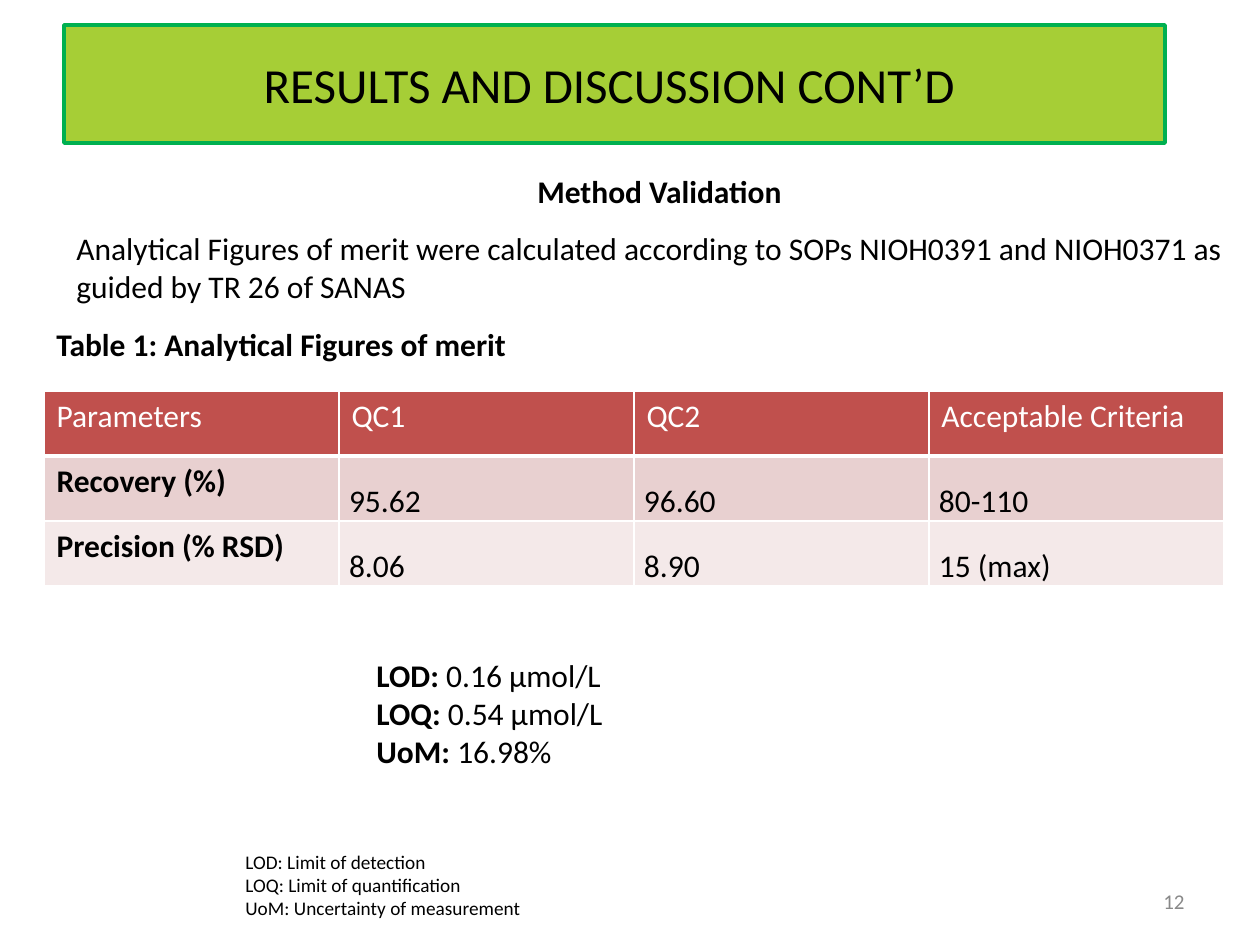
from dataclasses import dataclass

from lxml import etree
from pptx import Presentation
from pptx.dml.color import RGBColor
from pptx.enum.text import MSO_ANCHOR, PP_ALIGN
from pptx.oxml.ns import qn
from pptx.util import Inches, Pt

PX = Inches(1) / 126
FONT = "Calibri"
LEFT, CENTER, RIGHT = PP_ALIGN.LEFT, PP_ALIGN.CENTER, PP_ALIGN.RIGHT
TOP, MIDDLE, BOTTOM = MSO_ANCHOR.TOP, MSO_ANCHOR.MIDDLE, MSO_ANCHOR.BOTTOM

BLACK = RGBColor(0x00, 0x00, 0x00)
WHITE = RGBColor(0xFF, 0xFF, 0xFF)
GRAY = RGBColor(0x89, 0x89, 0x89)
LIME = RGBColor(0xA6, 0xCE, 0x36)
GREEN = RGBColor(0x00, 0xB0, 0x50)
RED = RGBColor(0xC0, 0x50, 0x4D)
ROSE = RGBColor(0xE8, 0xD0, 0xD0)
PALE_ROSE = RGBColor(0xF4, 0xE9, 0xE9)


@dataclass(frozen=True)
class Run:
    text: str
    bold: bool = False


@dataclass(frozen=True)
class Style:
    size: int = 18
    color: RGBColor = BLACK
    align: PP_ALIGN = LEFT
    before: int = 0
    after: int = 0
    line: float = 1.0


@dataclass(frozen=True)
class TextBlock:
    left: int
    top: int
    width: int
    height: int
    lines: tuple[tuple[Run, ...], ...]
    style: Style = Style()
    anchor: MSO_ANCHOR = TOP


TEXT_BLOCKS = (
    TextBlock(903, 876, 294, 50, ((Run("12"),),), Style(12, GRAY, RIGHT), MIDDLE),
    TextBlock(240, 166, 839, 51, ((Run("Method Validation", True),),),
              Style(align=CENTER, before=10, after=10)),
    TextBlock(44, 319, 630, 51,
              ((Run("Table 1: Analytical Figures of merit", True),),), Style(after=10)),
    TextBlock(64, 223, 1196, 89,
              ((Run("Analytical Figures of merit were calculated according to SOPs "
                    "NIOH0391 and NIOH0371 as guided by TR 26 of SANAS"),),)),
    TextBlock(364, 650, 635, 127, (
        (Run("LOD: ", True), Run("0.16 µmol/L")),
        (Run("LOQ:", True), Run(" 0.54 µmol/L")),
        (Run("UoM: ", True), Run("16.98%")),
    )),
    TextBlock(233, 844, 814, 106, (
        (Run("LOD: Limit of detection"),),
        (Run("LOQ: Limit of quantification"),),
        (Run("UoM: Uncertainty of measurement"),),
    ), Style(11)),
)

MERIT_ROWS = (
    ("Parameters", "QC1", "QC2", "Acceptable Criteria"),
    ("Recovery (%)", "95.62", "96.60", "80-110"),
    ("Precision (% RSD)", "8.06", "8.90", "15 (max)"),
)
ROW_FILLS = (RED, ROSE, PALE_ROSE)
COLUMN_WIDTH, ROW_HEIGHT = 295, 65
VALUE_FORMAT = {
    "vertical_anchor": BOTTOM,
    "margin_left": Inches(0.08),
    "margin_right": Inches(0.08),
    "margin_top": Inches(0.01),
    "margin_bottom": 0,
}


def px(length: int) -> int:
    return round(length * PX)


def set_attributes(target, values: dict) -> None:
    for name, value in values.items():
        setattr(target, name, value)


def write_lines(frame, lines: tuple[tuple[Run, ...], ...], style: Style) -> None:
    for index, runs in enumerate(lines):
        paragraph = frame.add_paragraph() if index else frame.paragraphs[0]
        set_attributes(paragraph, {
            "alignment": style.align,
            "space_before": Pt(style.before),
            "space_after": Pt(style.after),
            "line_spacing": style.line,
        })
        for part in runs:
            run = paragraph.add_run()
            run.text = part.text
            set_attributes(run.font, {"name": FONT, "size": Pt(style.size), "bold": part.bold})
            run.font.color.rgb = style.color


def draw_title(slide) -> None:
    title = slide.shapes.title
    set_attributes(title, {"left": px(64), "top": px(25), "width": px(1101), "height": px(118)})
    outline = etree.Element(qn("a:prstGeom"), prst="roundRect")
    guides = etree.SubElement(outline, qn("a:avLst"))
    etree.SubElement(guides, qn("a:gd"), name="adj", fmla="val 1500")
    title._element.spPr.find(qn("a:xfrm")).addnext(outline)
    title.fill.solid()
    title.fill.fore_color.rgb = LIME
    title.line.color.rgb = GREEN
    title.line.width = Pt(2)
    title.text_frame.vertical_anchor = MIDDLE
    write_lines(title.text_frame, ((Run("RESULTS AND DISCUSSION CONT’D "),),),
                Style(28, align=CENTER))


def draw_text(slide, block: TextBlock) -> None:
    box = slide.shapes.add_textbox(px(block.left), px(block.top), px(block.width), px(block.height))
    set_attributes(box.text_frame, {"word_wrap": True, "vertical_anchor": block.anchor})
    write_lines(box.text_frame, block.lines, block.style)


def set_borders(cell, bottom_width: int) -> None:
    """Give the cell white borders; call before the fill, which must follow them."""
    properties = cell._tc.get_or_add_tcPr()
    for side, width in {"L": 1, "R": 1, "T": 1, "B": bottom_width}.items():
        border = etree.SubElement(properties, qn(f"a:ln{side}"), w=str(Pt(width)))
        fill = etree.SubElement(border, qn("a:solidFill"))
        etree.SubElement(fill, qn("a:srgbClr"), val=str(WHITE))


def draw_merit_table(slide) -> None:
    row_count, column_count = len(MERIT_ROWS), len(MERIT_ROWS[0])
    table = slide.shapes.add_table(
        row_count, column_count, px(44), px(391),
        px(COLUMN_WIDTH * column_count), px(ROW_HEIGHT * row_count)).table
    for r, (texts, fill) in enumerate(zip(MERIT_ROWS, ROW_FILLS)):
        is_header = r == 0
        for c, text in enumerate(texts):
            cell = table.cell(r, c)
            is_value = not is_header and c > 0
            set_borders(cell, 3 if is_header else 1)
            cell.fill.solid()
            cell.fill.fore_color.rgb = fill
            if is_value:
                set_attributes(cell, VALUE_FORMAT)
            style = Style(color=WHITE if is_header else BLACK,
                          after=10 if is_value else 0, line=1.15 if is_value else 1.0)
            write_lines(cell.text_frame, ((Run(text, not is_header and c == 0),),), style)


def main() -> None:
    presentation = Presentation()
    set_attributes(presentation, {"slide_width": Inches(10), "slide_height": Inches(7.5)})
    slide = presentation.slides.add_slide(presentation.slide_layouts[5])
    draw_title(slide)
    for block in TEXT_BLOCKS:
        draw_text(slide, block)
    draw_merit_table(slide)
    presentation.save("out.pptx")


if __name__ == "__main__":
    main()
